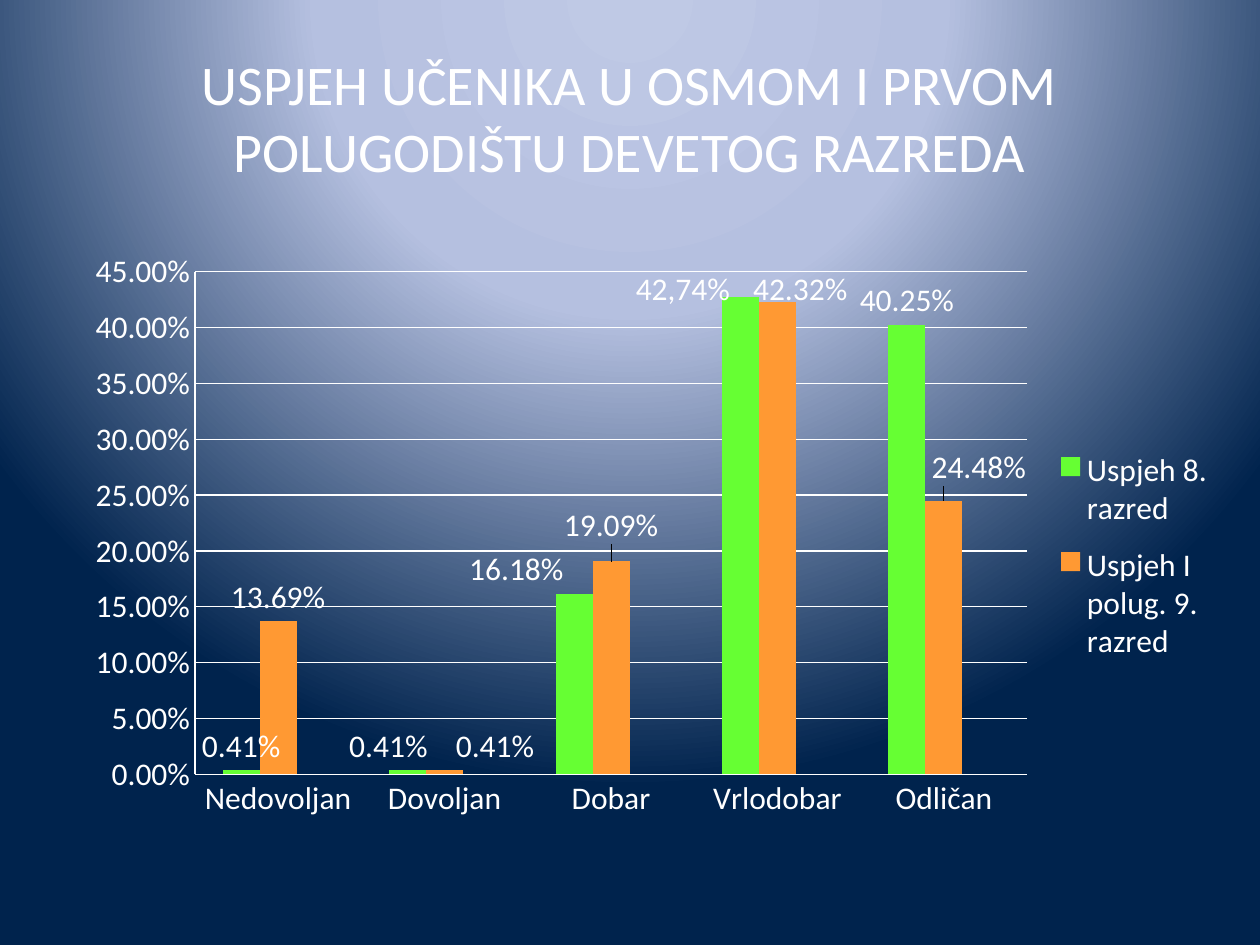
import pptx
import pptx.chart.data
import pptx.dml.color
import pptx.enum.chart
import pptx.enum.text
import pptx.oxml
import pptx.oxml.ns
import pptx.util
from pptx.util import Cm, Pt

RGBColor = pptx.dml.color.RGBColor
WHITE = RGBColor(0xFF, 0xFF, 0xFF)
GREEN = RGBColor(0x66, 0xFF, 0x33)
ORANGE = RGBColor(0xFF, 0x99, 0x33)
OLIVE = RGBColor(0x9B, 0xBB, 0x59)
PALE_BLUE = RGBColor(0xBF, 0xC9, 0xE5)
SOFT_BLUE = RGBColor(0xB5, 0xC0, 0xE0)
NAVY = RGBColor(0x00, 0x23, 0x4D)

FONT = "Calibri"
PERCENT = "0.00%"
GRADES = ["Nedovoljan", "Dovoljan", "Dobar", "Vrlodobar", "Odličan"]
RESULTS = [
    ("Uspjeh 8. razred", [0.0041, 0.0041, 0.1618, 0.4274, 0.4025], GREEN),
    ("Uspjeh I polug. 9. razred", [0.1369, 0.0041, 0.1909, 0.4232, 0.2448], ORANGE),
    ("Series 3", [None] * 5, OLIVE),
]
# (series, grade): label shift as a percentage of the chart's width and height
LABEL_SHIFTS = {
    (0, 1): (-1.6, 0), (0, 2): (-4.8, 0), (0, 3): (-4.8, 2.3),
    (1, 1): (4.2, 0), (1, 2): (0, -1.7), (1, 3): (1.9, 1.7), (1, 4): (2.9, -1.3),
}
CUSTOM_LABELS = {(0, 3): "42,74%"}


def xml(body):
    """Parse one element, declaring the drawing and chart namespaces on it."""
    tag, rest = body.split(" ", 1)
    return pptx.oxml.parse_xml(f"{tag} {pptx.oxml.ns.nsdecls('a', 'c', 'p')} {rest}")


def set_font(font, size):
    font.name = FONT
    font.size = Pt(size)
    font.bold = False
    font.color.rgb = WHITE


def manual_layout(**settings):
    entries = "".join(f'<c:{name} val="{value}"/>' for name, value in settings.items())
    return xml(f"<c:layout ><c:manualLayout>{entries}</c:manualLayout></c:layout>")


def paint_background(slide):
    """Fill the background with a circular gradient centred above the slide."""
    stops = "".join(
        f'<a:gs pos="{percent * 1000}"><a:srgbClr val="{color}"/></a:gs>'
        for percent, color in [(0, PALE_BLUE), (40, SOFT_BLUE), (100, NAVY)]
    )
    slide.element.cSld.insert(0, xml(
        f'<p:bg ><p:bgPr><a:gradFill rotWithShape="1"><a:gsLst>{stops}</a:gsLst>'
        '<a:path path="circle"><a:fillToRect l="50000" t="-80000" r="50000" b="180000"/>'
        "</a:path></a:gradFill><a:effectLst/></p:bgPr></p:bg>"
    ))


def set_title(slide, wording):
    title = slide.shapes.title
    title.left, title.top, title.width, title.height = Cm(1.27), Cm(0.76), Cm(22.86), Cm(3.18)
    title.text_frame.text = wording
    title.text_frame.vertical_anchor = pptx.enum.text.MSO_ANCHOR.MIDDLE
    paragraph = title.text_frame.paragraphs[0]
    paragraph.alignment = pptx.enum.text.PP_ALIGN.CENTER
    set_font(paragraph.runs[0].font, 32)


def add_results_chart(slide):
    results = pptx.chart.data.CategoryChartData(number_format=PERCENT)
    results.categories = GRADES
    for name, values, _ in RESULTS:
        results.add_series(name, values)
    chart = slide.shapes.add_chart(
        pptx.enum.chart.XL_CHART_TYPE.COLUMN_CLUSTERED,
        Cm(0.71), Cm(4.88), Cm(24.21), Cm(14.2), results,
    ).chart
    chart.has_title = False
    set_font(chart.font, 18)
    plot_area = chart.plots[0]
    plot_area.gap_width = 150
    plot_area.overlap = 0
    plot_area.vary_by_categories = False
    area = chart.element.chart.plotArea
    for layout in area.findall(pptx.oxml.ns.qn("c:layout")):
        area.remove(layout)
    area.insert(0, manual_layout(
        layoutTarget="inner", xMode="edge", yMode="edge", x=0.133, y=0.042, w=0.693, h=0.714))
    return chart


def format_axes(chart):
    for axis in (chart.category_axis, chart.value_axis):
        axis.major_tick_mark = axis.minor_tick_mark = pptx.enum.chart.XL_TICK_MARK.NONE
        axis.format.line.color.rgb = WHITE
        axis.format.line.width = Pt(0.75)
        set_font(axis.tick_labels.font, 18)
    scale = chart.value_axis
    scale.minimum_scale, scale.maximum_scale, scale.major_unit = 0, 0.45, 0.05
    scale.tick_labels.number_format = PERCENT
    scale.tick_labels.number_format_is_linked = False
    scale.has_major_gridlines = True
    scale.major_gridlines.format.line.color.rgb = WHITE
    scale.major_gridlines.format.line.width = Pt(0.75)


def format_series(chart):
    for series, (_, _, color) in zip(chart.plots[0].series, RESULTS):
        series.format.fill.solid()
        series.format.fill.fore_color.rgb = color
        series.invert_if_negative = False
        labels = series.data_labels
        labels.show_value = True
        labels.position = pptx.enum.chart.XL_LABEL_POSITION.OUTSIDE_END
        labels.number_format = PERCENT
        labels.number_format_is_linked = False
        set_font(labels.font, 18)


def shift_labels(chart):
    """Move the labels that would otherwise run into their neighbours."""
    for (series_index, grade_index), (right, down) in LABEL_SHIFTS.items():
        series = chart.plots[0].series[series_index]
        label = series.points[grade_index].data_label
        wording = CUSTOM_LABELS.get((series_index, grade_index))
        if wording:
            label.text_frame.text = wording
            set_font(label.text_frame.paragraphs[0].runs[0].font, 18)
        else:
            set_font(label.font, 18)
        label.position = pptx.enum.chart.XL_LABEL_POSITION.OUTSIDE_END
        entry = series.data_labels._element.xpath(f'c:dLbl[c:idx/@val="{grade_index}"]')[0]
        entry.insert(1, manual_layout(x=right / 100, y=down / 100))


def add_legend(chart):
    """Show the legend on the right without the empty third series."""
    chart.has_legend = True
    legend = chart.legend
    legend.position = pptx.enum.chart.XL_LEGEND_POSITION.RIGHT
    legend.include_in_layout = False
    set_font(legend.font, 18)
    element = chart.element.xpath("c:chart/c:legend")[0]
    for layout in element.findall(pptx.oxml.ns.qn("c:layout")):
        element.remove(layout)
    element.insert(1, xml('<c:legendEntry ><c:idx val="2"/><c:delete val="1"/></c:legendEntry>'))
    element.insert(2, manual_layout(xMode="edge", yMode="edge", x=0.84, y=0.27, w=0.15, h=0.35))


def main():
    presentation = pptx.Presentation()
    presentation.slide_width, presentation.slide_height = Cm(25.4), Cm(19.05)
    slide = presentation.slides.add_slide(presentation.slide_layouts[5])
    paint_background(slide)
    set_title(slide, "USPJEH UČENIKA U OSMOM I PRVOM POLUGODIŠTU DEVETOG RAZREDA")
    chart = add_results_chart(slide)
    format_axes(chart)
    format_series(chart)
    shift_labels(chart)
    add_legend(chart)
    presentation.save("out.pptx")


if __name__ == "__main__":
    main()
